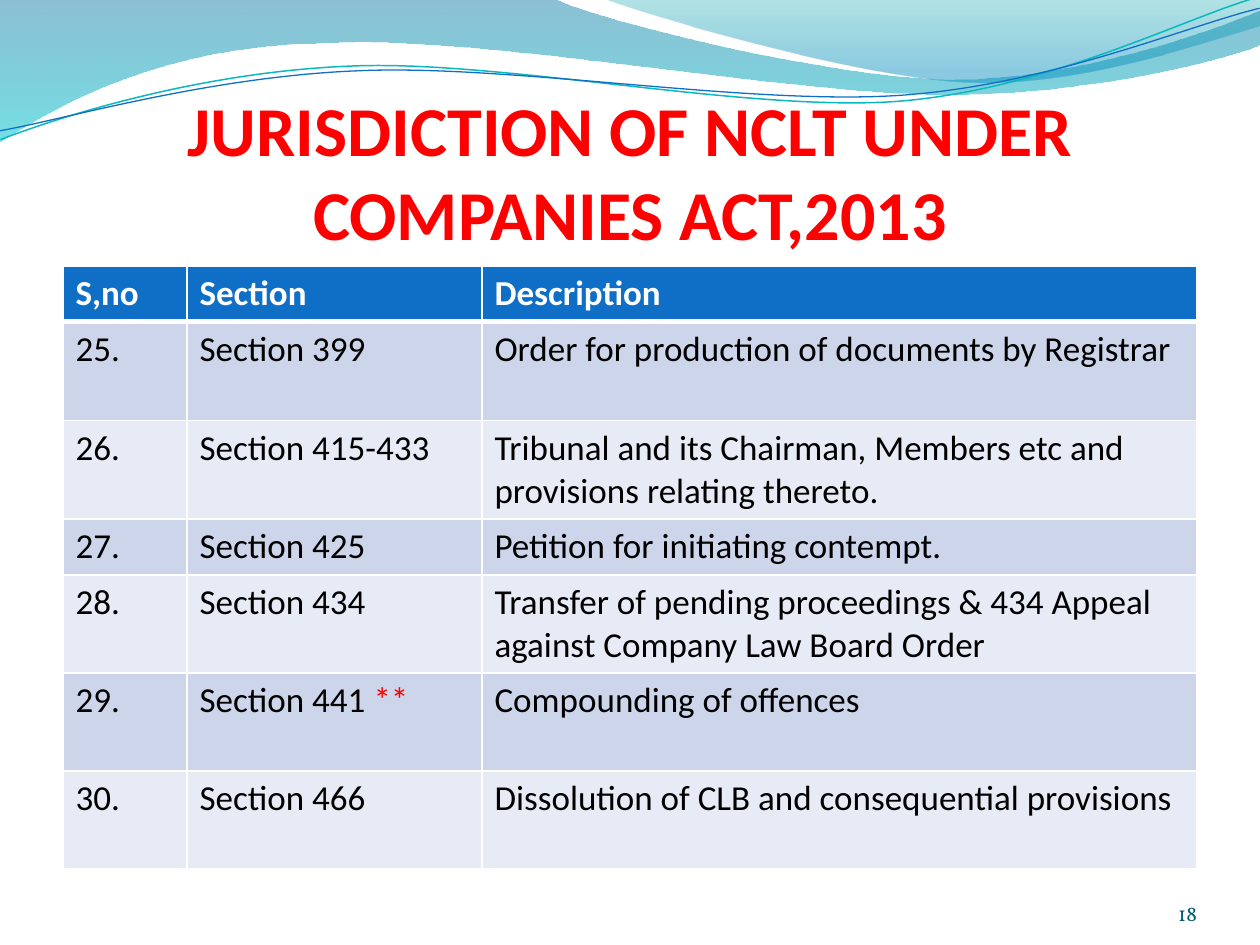
import dataclasses
from typing import Optional

import pptx
import pptx.dml.color
import pptx.enum.text
import pptx.oxml.ns
import pptx.util
from lxml import etree

PX = 914400 / 126
LINE_TILT = 357.3
COLORS = {
    "white": "FFFFFF", "black": "000000", "red": "FF0000",
    "header": "0F6FC6", "odd_row": "CCD5EA", "even_row": "E7EBF5",
    "number": "045D75", "teal_line": "0AB8BF", "blue_line": "0F6FC6",
    "wave_blue": "0074A1", "wave_cyan": "00C6CF",
    "crest_teal": "00A1A9", "crest_blue": "008BBF",
}
Point = tuple[int, int]


@dataclasses.dataclass
class Stop:
    position: float
    color: str
    opacity: int


@dataclasses.dataclass
class Wave:
    """Start point, then segments of one point (line) or three (curve)."""
    start: Point
    segments: list[list[Point]]
    stops: Optional[list[Stop]] = None
    line: str = ""
    weight: float = 0


@dataclasses.dataclass
class Entry:
    number: str
    section: str
    description: str
    height: int = 98
    mark: str = ""


WAVES = [
    Wave((0, 0), [
        [(554, -1)],
        [(600, 21), (837, 79), (955, 79)],
        [(1075, 79), (1207, 33), (1260, 11)],
        [(1261, 45)],
        [(1238, 55), (1096, 96), (940, 94)],
        [(784, 94), (481, 35), (324, 43)],
        [(163, 45), (58, 105), (-1, 142)],
        [(0, 0)],
    ], [Stop(0, "wave_blue", 45), Stop(1, "wave_cyan", 55)]),
    Wave((604, -1), [
        [(641, 14), (859, 78), (969, 82)],
        [(1079, 87), (1211, 40), (1260, 26)],
        [(1260, 0)],
        [(604, -1)],
    ], [Stop(0, "crest_teal", 30), Stop(0.8, "crest_blue", 45)]),
    Wave((-2, 110), [
        [(58, 90), (199, 52), (350, 53)],
        [(499, 53), (745, 118), (896, 114)],
        [(1048, 109), (1184, 45), (1260, 27)],
    ], line="teal_line", weight=0.85),
    Wave((-2, 101), [
        [(57, 94), (207, 57), (357, 58)],
        [(509, 58), (750, 112), (902, 108)],
        [(1052, 104), (1189, 52), (1262, 38)],
    ], line="blue_line", weight=0.75),
]
COLUMN_WIDTHS = [124, 295, 715]
ENTRIES = [
    Entry("S,no", "Section", "Description", 55),
    Entry("25.", "Section 399", "Order for production of documents by Registrar", 99),
    Entry("26.", "Section 415-433",
          "Tribunal and its Chairman, Members etc and provisions relating thereto."),
    Entry("27.", "Section 425", "Petition for initiating contempt.", 56),
    Entry("28.", "Section 434",
          "Transfer of pending proceedings & 434 Appeal against Company Law Board Order"),
    Entry("29.", "Section 441", "Compounding of offences", mark=" **"),
    Entry("30.", "Section 466", "Dissolution of CLB and consequential provisions"),
]


def emu(px: float) -> int:
    return round(px * PX)


def rgb(name: str) -> pptx.dml.color.RGBColor:
    return pptx.dml.color.RGBColor.from_string(COLORS[name])


def style_run(run, size: int, color: str, bold: bool = False, font: str = "Calibri") -> None:
    run.font.name = font
    run.font.size = pptx.util.Pt(size)
    run.font.bold = bold
    run.font.color.rgb = rgb(color)


def clear_margins(frame, top: int = 0) -> None:
    frame.margin_left = frame.margin_right = frame.margin_bottom = 0
    frame.margin_top = emu(top)
    frame.vertical_anchor = pptx.enum.text.MSO_ANCHOR.BOTTOM
    frame.word_wrap = True


def bend_segments(shape, segments: list[list[Point]]) -> None:
    """Join each run of three line steps into one cubic curve."""
    steps = iter(list(shape.element.iter(pptx.oxml.ns.qn("a:lnTo"))))
    for segment in segments:
        first, *others = [next(steps) for _ in segment]
        if others:
            curve = etree.Element(pptx.oxml.ns.qn("a:cubicBezTo"))
            first.addprevious(curve)
            for step in (first, *others):
                curve.append(step[0])
                step.getparent().remove(step)


def draw_wave(slide, wave: Wave) -> None:
    builder = slide.shapes.build_freeform(emu(wave.start[0]), emu(wave.start[1]))
    builder.add_line_segments(
        [(emu(x), emu(y)) for segment in wave.segments for x, y in segment],
        close=wave.stops is not None)
    shape = builder.convert_to_shape()
    bend_segments(shape, wave.segments)
    shape.shadow.inherit = False
    if wave.stops is None:
        shape.rotation = LINE_TILT
        shape.fill.background()
        shape.line.color.rgb = rgb(wave.line)
        shape.line.width = pptx.util.Pt(wave.weight)
        return
    shape.line.fill.background()
    shape.fill.gradient()
    shape.fill.gradient_angle = 270
    for gradient_stop, stop in zip(shape.fill.gradient_stops, wave.stops):
        gradient_stop.position = stop.position
        gradient_stop.color.rgb = rgb(stop.color)
    tints = shape.element.spPr.iter(pptx.oxml.ns.qn("a:srgbClr"))
    for tint, stop in zip(tints, wave.stops):
        alpha = etree.SubElement(tint, pptx.oxml.ns.qn("a:alpha"))
        alpha.set("val", str(stop.opacity * 1000))


def set_borders(cell, top: int, bottom: int) -> None:
    properties = cell._tc.get_or_add_tcPr()
    sides = {"L": 1, "R": 1, "T": top, "B": bottom}
    for position, (side, weight) in enumerate(sides.items()):
        border = etree.Element(pptx.oxml.ns.qn(f"a:ln{side}"), w=str(pptx.util.Pt(weight)))
        fill = etree.SubElement(border, pptx.oxml.ns.qn("a:solidFill"))
        etree.SubElement(fill, pptx.oxml.ns.qn("a:srgbClr"), val=COLORS["white"])
        properties.insert(position, border)


def draw_sections(slide, left: int, top: int) -> None:
    sections = slide.shapes.add_table(
        len(ENTRIES), len(COLUMN_WIDTHS), emu(left), emu(top),
        emu(sum(COLUMN_WIDTHS)), emu(sum(entry.height for entry in ENTRIES))).table
    for column, width in zip(sections.columns, COLUMN_WIDTHS):
        column.width = emu(width)
    for row, entry in enumerate(ENTRIES):
        sections.rows[row].height = emu(entry.height)
        header = row == 0
        band = "header" if header else "odd_row" if row % 2 else "even_row"
        for column, words in enumerate([entry.number, entry.section, entry.description]):
            cell = sections.cell(row, column)
            cell.fill.solid()
            cell.fill.fore_color.rgb = rgb(band)
            set_borders(cell, 3 if row == 1 else 1, 3 if header else 1)
            cell.text_frame.text = words
            paragraph = cell.text_frame.paragraphs[0]
            style_run(paragraph.runs[0], 20, "white" if header else "black", header)
            if column == 1 and entry.mark:
                mark = paragraph.add_run()
                mark.text = entry.mark
                style_run(mark, 20, "red")


def main() -> None:
    deck = pptx.Presentation()
    deck.slide_width, deck.slide_height = emu(1260), emu(945)
    slide = deck.slides.add_slide(deck.slide_layouts[5])
    # Wave decoration, behind the title
    for wave in WAVES:
        draw_wave(slide, wave)
    # Title
    title = slide.shapes.title
    slide.shapes.element.append(title.element)
    title.left, title.top, title.width, title.height = map(emu, (63, 97, 1134, 158))
    title.text_frame.text = "JURISDICTION OF NCLT UNDER COMPANIES ACT,2013"
    clear_margins(title.text_frame, top=6)
    title.text_frame.auto_size = pptx.enum.text.MSO_AUTO_SIZE.NONE
    heading = title.text_frame.paragraphs[0]
    heading.alignment = pptx.enum.text.PP_ALIGN.CENTER
    style_run(heading.runs[0], 40, "red", True)
    # Table of sections
    draw_sections(slide, 63, 266)
    # Page number
    page = slide.shapes.add_textbox(*map(emu, (1092, 876, 105, 50))).text_frame
    clear_margins(page)
    page.text = "18"
    page.paragraphs[0].alignment = pptx.enum.text.PP_ALIGN.RIGHT
    style_run(page.paragraphs[0].runs[0], 12, "number", font="Vollkorn")
    deck.save("out.pptx")


if __name__ == "__main__":
    main()
